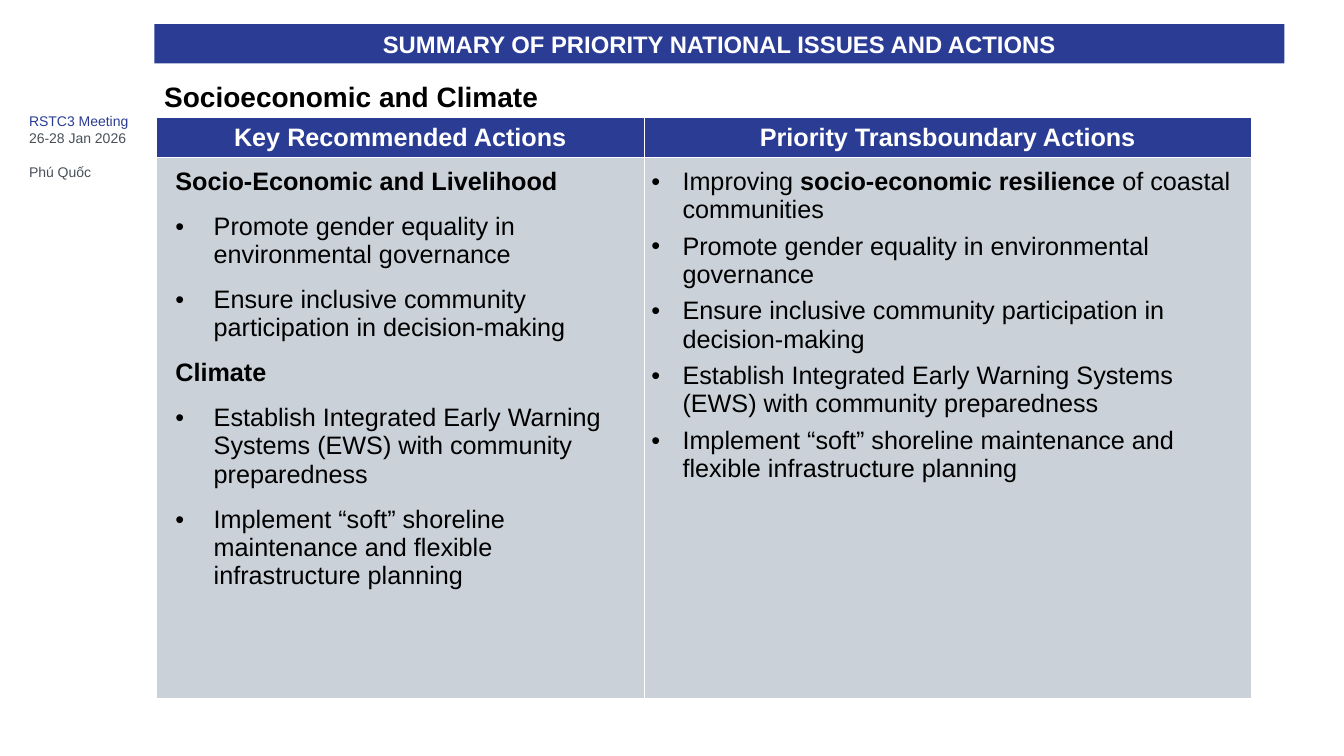
"""Build the summary slide of priority national issues and actions."""
from dataclasses import dataclass

from lxml import etree
from pptx import Presentation
from pptx.dml.color import RGBColor
from pptx.enum.text import MSO_ANCHOR, MSO_AUTO_SIZE, PP_ALIGN
from pptx.oxml.ns import qn
from pptx.util import Pt

LEFT, CENTER = PP_ALIGN.LEFT, PP_ALIGN.CENTER
TOP, MIDDLE = MSO_ANCHOR.TOP, MSO_ANCHOR.MIDDLE
NO_AUTOFIT = MSO_AUTO_SIZE.NONE
PX = 9144
LAYOUT_TITLE_ONLY = 5


@dataclass(frozen=True)
class Theme:
    font: str = "Arial"
    blue: str = "2B3C94"
    panel: str = "CAD1D8"
    white: str = "FFFFFF"
    black: str = "000000"
    grey: str = "495057"
    small: int = 10
    banner: int = 17
    table: int = 18
    heading: int = 20
    border: float = 0.75


THEME = Theme()


@dataclass(frozen=True)
class Box:
    left: int
    top: int
    width: int
    height: int

    def emu(self) -> list[int]:
        return [n * PX for n in (self.left, self.top, self.width, self.height)]


@dataclass(frozen=True)
class Line:
    text: str
    size: int = THEME.table
    color: str = THEME.black
    bold: bool = False
    align: PP_ALIGN = LEFT
    before: int = 0
    margin: int = 0
    hanging: int = 0
    strong: str = ""


def action(text: str, strong: str = "", before: int = 6) -> Line:
    return Line(text, strong=strong, before=before, margin=31, hanging=31)


def national(text: str) -> Line:
    return Line(text, before=12, margin=50, hanging=38)


def theme_heading(text: str, before: int = 0) -> Line:
    return Line(text, bold=True, before=before, margin=12)


def column_title(text: str) -> Line:
    return Line(text, color=THEME.white, bold=True, align=CENTER)


GENDER = "Promote gender equality in environmental governance"
COMMUNITY = "Ensure inclusive community participation in decision-making"
WARNING = "Establish Integrated Early Warning Systems (EWS) with community preparedness"
SHORELINE = "Implement “soft” shoreline maintenance and flexible infrastructure planning"

BANNER = Box(153, 24, 1121, 39)
HEADING = Box(153, 74, 394, 44)
MEETING = Box(19, 107, 134, 61)
TABLE = Box(155, 117, 1086, 576)
COLUMN_WIDTHS = (484, 602)
ROW_HEIGHTS = (39, 537)

BANNER_LINES = [Line("SUMMARY OF PRIORITY NATIONAL ISSUES AND ACTIONS",
                     THEME.banner, THEME.white, True, CENTER)]
HEADING_LINES = [Line("Socioeconomic and Climate", THEME.heading, bold=True)]
MEETING_LINES = [
    Line("RSTC3 Meeting", THEME.small, THEME.blue),
    Line("26-28 Jan 2026", THEME.small, THEME.grey),
    Line("Phú Quốc", THEME.small, THEME.grey, before=12),
]
COLUMN_TITLES = ("Key Recommended Actions", "Priority Transboundary Actions")
NATIONAL_ACTIONS = [
    theme_heading("Socio-Economic and Livelihood"),
    national(GENDER),
    national(COMMUNITY),
    theme_heading("Climate", before=12),
    national(WARNING),
    national(SHORELINE),
]
TRANSBOUNDARY_ACTIONS = [
    action("Improving socio-economic resilience of coastal communities",
           strong="socio-economic resilience ", before=0),
    *map(action, (GENDER, COMMUNITY, WARNING, SHORELINE)),
]


def rgb(color: str) -> RGBColor:
    return RGBColor.from_string(color)


def add_bullet(properties) -> None:
    color = etree.SubElement(properties, qn("a:buClr"))
    etree.SubElement(color, qn("a:srgbClr"), val=THEME.black)
    etree.SubElement(properties, qn("a:buFont"), typeface=THEME.font)
    etree.SubElement(properties, qn("a:buChar"), char="•")


def format_font(font, line: Line) -> None:
    font.name = THEME.font
    font.size = Pt(line.size)
    font.color.rgb = rgb(line.color)
    font.bold = line.bold


def write_lines(frame, lines: list[Line]) -> None:
    frame.word_wrap = True
    for index, line in enumerate(lines):
        paragraph = frame.add_paragraph() if index else frame.paragraphs[0]
        properties = paragraph._p.get_or_add_pPr()
        properties.set("marL", str(line.margin * PX))
        properties.set("indent", str(-line.hanging * PX))
        if line.hanging:
            add_bullet(properties)
        paragraph.alignment = line.align
        if line.before:
            paragraph.space_before = Pt(line.before)
        format_font(paragraph.font, line)
        parts = line.text.partition(line.strong) if line.strong else (line.text,)
        for part in parts:
            run = paragraph.add_run()
            run.text = part
            if line.strong:
                run.font.bold = part == line.strong


def write_box(shape, lines: list[Line], anchor: MSO_ANCHOR = TOP) -> None:
    frame = shape.text_frame
    frame.auto_size = NO_AUTOFIT
    frame.vertical_anchor = anchor
    write_lines(frame, lines)


def add_borders(cell) -> None:
    properties = cell._tc.get_or_add_tcPr()
    for index, side in enumerate(("lnL", "lnR", "lnT", "lnB")):
        border = etree.Element(qn(f"a:{side}"), w=str(Pt(THEME.border)))
        fill = etree.SubElement(border, qn("a:solidFill"))
        etree.SubElement(fill, qn("a:srgbClr"), val=THEME.white)
        properties.insert(index, border)


def fill_cell(cell, lines: list[Line], color: str, anchor: MSO_ANCHOR,
              side: int, edge: int) -> None:
    cell.fill.solid()
    cell.fill.fore_color.rgb = rgb(color)
    cell.vertical_anchor = anchor
    cell.margin_left = cell.margin_right = side * PX
    cell.margin_top = cell.margin_bottom = edge * PX
    write_lines(cell.text_frame, lines)
    add_borders(cell)


def add_banner(slide) -> None:
    title = slide.shapes.title
    title.left, title.top, title.width, title.height = BANNER.emu()
    title.fill.solid()
    title.fill.fore_color.rgb = rgb(THEME.blue)
    write_box(title, BANNER_LINES, MIDDLE)


def add_actions_table(slide) -> None:
    table = slide.shapes.add_table(2, 2, *TABLE.emu()).table
    for row, height in zip(table.rows, ROW_HEIGHTS):
        row.height = height * PX
    for index, lines in enumerate((NATIONAL_ACTIONS, TRANSBOUNDARY_ACTIONS)):
        table.columns[index].width = COLUMN_WIDTHS[index] * PX
        fill_cell(table.cell(0, index), [column_title(COLUMN_TITLES[index])],
                  THEME.blue, MIDDLE, 10, 5)
        fill_cell(table.cell(1, index), lines, THEME.panel, TOP, 7, 10)


def main() -> None:
    presentation = Presentation()
    presentation.slide_width, presentation.slide_height = 1333 * PX, 750 * PX
    layout = presentation.slide_layouts[LAYOUT_TITLE_ONLY]
    slide = presentation.slides.add_slide(layout)
    add_banner(slide)
    for box, lines in ((MEETING, MEETING_LINES), (HEADING, HEADING_LINES)):
        write_box(slide.shapes.add_textbox(*box.emu()), lines)
    add_actions_table(slide)
    presentation.save("out.pptx")


if __name__ == "__main__":
    main()
